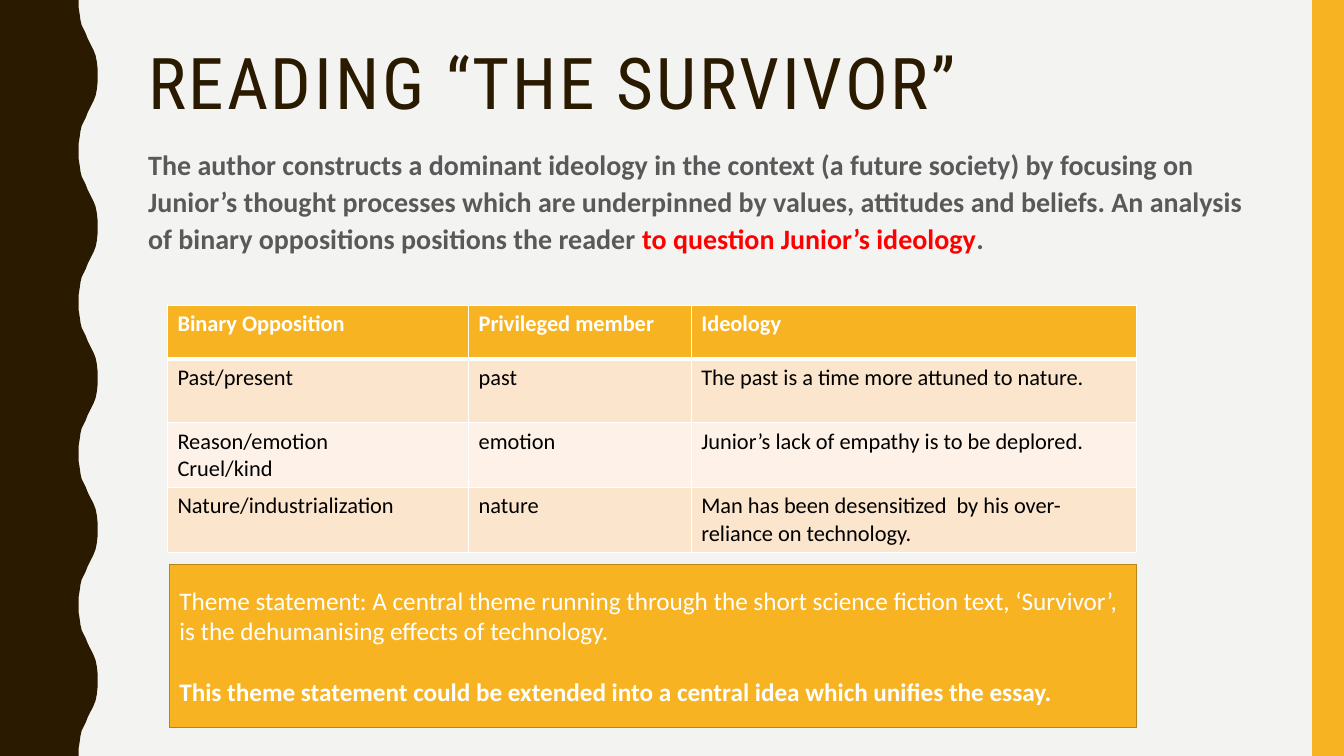
from lxml.etree import SubElement
from pptx import Presentation
from pptx.dml.color import RGBColor
from pptx.enum.shapes import MSO_SHAPE
from pptx.enum.text import MSO_ANCHOR, MSO_AUTO_SIZE, PP_ALIGN
from pptx.oxml.ns import qn
from pptx.util import Cm, Pt

BROWN = RGBColor(0x2A, 0x1A, 0x00)
GOLD = RGBColor(0xF8, 0xB3, 0x23)
EDGE = RGBColor(0xB7, 0x84, 0x1A)
PAPER = RGBColor(0xF3, 0xF3, 0xF2)
GREY = RGBColor(0x59, 0x59, 0x59)
RED = RGBColor(0xFF, 0x00, 0x00)
WHITE = RGBColor(0xFF, 0xFF, 0xFF)
BLACK = RGBColor(0x00, 0x00, 0x00)
PEACH = RGBColor(0xFC, 0xE5, 0xCD)
CREAM = RGBColor(0xFE, 0xF2, 0xE8)

WIDE, HIGH = 33.87, 19.05
WAVES = 5
CURVE = [(1.98, 0), (1.98, 0.18), (2.01, 0.36), (2.03, 0.51), (2.06, 0.64),
         (2.11, 0.74), (2.16, 0.84), (2.21, 0.97), (2.26, 1.07), (2.31, 1.17),
         (2.36, 1.27), (2.41, 1.4), (2.44, 1.55), (2.46, 1.73), (2.46, 1.9)]

COLS = [7.59, 5.61, 11.23]
TALL = [1.35, 1.6, 1.6, 1.6]
CELLS = [
    ["Binary Opposition", "Privileged member", "Ideology"],
    ["Past/present", "past", "The past is a time more attuned to nature."],
    ["Reason/emotion\nCruel/kind", "emotion",
     "Junior’s lack of empathy is to be deplored."],
    ["Nature/industrialization", "nature",
     "Man has been desensitized  by his over-reliance on technology."],
]


class Deck:
    """Holds the style and the current slide."""

    def __init__(self, font, head):
        self.font, self.head = font, head
        self.file = Presentation()
        self.file.slide_width, self.file.slide_height = Cm(WIDE), Cm(HIGH)
        self.slide = self.file.slides.add_slide(self.file.slide_layouts[1])
        self.slide.background.fill.solid()
        self.slide.background.fill.fore_color.rgb = PAPER
        self.shapes = self.slide.shapes

    def run(self, para, text, size, color, bold=False, font=None):
        run = para.add_run()
        run.text = text
        run.font.size, run.font.bold = Pt(size), bold
        run.font.name = font or self.font
        run.font.color.rgb = color
        return run

    def paint(self, shape, fill, line=None):
        shape.shadow.inherit = False
        shape.fill.solid()
        shape.fill.fore_color.rgb = fill
        if line:
            shape.line.color.rgb = line
            shape.line.width = Pt(1)
        else:
            shape.line.fill.background()

    def wave(self, fill):
        step = HIGH / WAVES
        cycle = CURVE + [(x, step - y) for x, y in reversed(CURVE)]
        edge = [(Cm(x), Cm(y + n * step)) for n in range(WAVES) for x, y in cycle]
        form = self.shapes.build_freeform(0, 0)
        form.add_line_segments(edge + [(0, Cm(HIGH))])
        self.paint(form.convert_to_shape(), fill)

    def rect(self, box, fill, line=None):
        shape = self.shapes.add_shape(MSO_SHAPE.RECTANGLE, *map(Cm, box))
        self.paint(shape, fill, line)
        return shape

    def holder(self, shape, box, space):
        shape.left, shape.top, shape.width, shape.height = map(Cm, box)
        frame = shape.text_frame
        frame.word_wrap = True
        frame.auto_size = MSO_AUTO_SIZE.NONE
        frame.vertical_anchor = MSO_ANCHOR.TOP
        para = frame.paragraphs[0]
        para.alignment, para.line_spacing = PP_ALIGN.LEFT, space
        return para

    def title(self, text, box):
        para = self.holder(self.shapes.title, box, 0.9)
        run = self.run(para, text, 51, BROWN, font=self.head)
        run._r.get_or_add_rPr().set("spc", "200")

    def body(self, parts, box):
        para = self.holder(self.slide.placeholders[1], box, 1.1)
        para.space_before = Pt(7)
        props = para._p.get_or_add_pPr()
        props.set("marL", "0")
        props.set("indent", "0")
        SubElement(props, qn("a:buNone"))
        for text, color in parts:
            self.run(para, text, 20, color, True)

    def border(self, cell, sides):
        props = cell._tc.get_or_add_tcPr()
        for side, width in sides.items():
            line = SubElement(props, qn("a:ln" + side), w=str(Pt(width)))
            fill = SubElement(line, qn("a:solidFill"))
            SubElement(fill, qn("a:srgbClr"), val=str(WHITE))

    def table(self, left, top):
        frame = self.shapes.add_table(len(TALL), len(COLS), Cm(left), Cm(top),
                                      Cm(sum(COLS)), Cm(sum(TALL)))
        table = frame.table
        for col, width in zip(table.columns, COLS):
            col.width = Cm(width)
        for r, (row, height) in enumerate(zip(table.rows, TALL)):
            row.height = Cm(height)
            fill = GOLD if r == 0 else PEACH if r % 2 else CREAM
            sides = {"L": 1, "R": 1, "T": 3 if r == 1 else 1, "B": 1 if r else 3}
            for cell, text in zip(row.cells, CELLS[r]):
                self.border(cell, sides)
                cell.fill.solid()
                cell.fill.fore_color.rgb = fill
                for n, part in enumerate(text.split("\n")):
                    words = cell.text_frame
                    para = words.add_paragraph() if n else words.paragraphs[0]
                    self.run(para, part, 16, BLACK if r else WHITE, r == 0)

    def panel(self, first, last, box):
        frame = self.rect(box, GOLD, EDGE).text_frame
        frame.word_wrap = True
        frame.vertical_anchor = MSO_ANCHOR.MIDDLE
        para, end = frame.paragraphs[0], frame.add_paragraph()
        para.alignment = end.alignment = PP_ALIGN.LEFT
        end.space_before = Pt(22)
        self.run(para, first, 18, WHITE)
        self.run(end, last, 18, WHITE, True)


def main():
    deck = Deck("Calibri", "Roboto Condensed")
    deck.wave(BROWN)
    deck.rect((33.07, 0, 0.8, HIGH), GOLD)
    deck.title("READING “THE SURVIVOR”", (3.48, 1.07, 28.27, 4.14))
    deck.body([
        ("The author constructs a dominant ideology in the context (a future "
         "society) by focusing on Junior’s thought processes which are "
         "underpinned by values, attitudes and beliefs. An analysis of binary "
         "oppositions positions the reader ", GREY),
        ("to question Junior’s ideology", RED),
        (".", GREY),
    ], (3.48, 3.51, 28.27, 9.98))
    deck.table(4.22, 7.7)
    deck.panel(
        "Theme statement: A central theme running through the short science "
        "fiction text, ‘Survivor’, is the dehumanising effects of technology.",
        "This theme statement could be extended into a central idea which "
        "unifies the essay.", (4.27, 14.22, 24.38, 4.11))
    deck.file.save("out.pptx")


if __name__ == "__main__":
    main()
